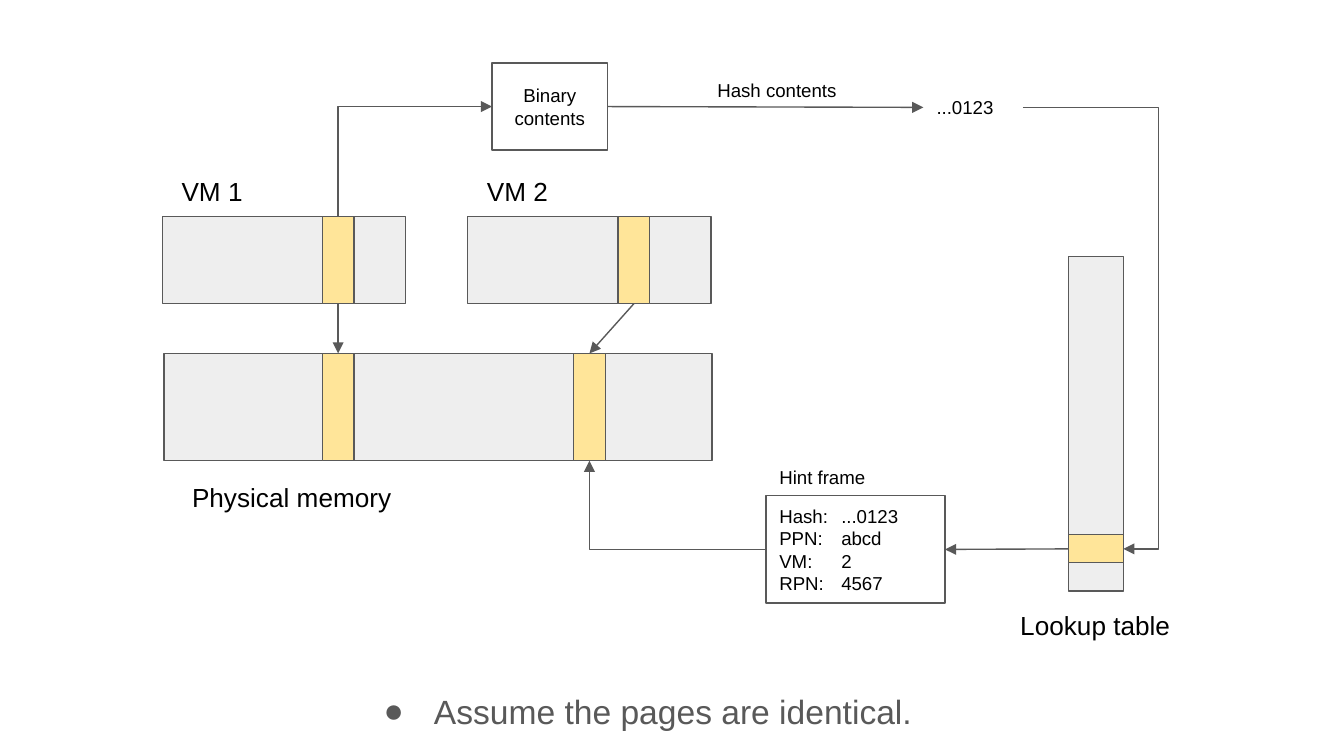
from lxml import etree
from pptx import Presentation
from pptx import util as u
from pptx.dml.color import RGBColor
from pptx.enum import shapes, text
from pptx.oxml.ns import qn

THEME = {
    "font": "Arial",
    "ink": "000000", "grey": "595959", "memory": "EEEEEE",
    "page": "FFE599", "paper": "FFFFFF",
    "small": 10, "label": 14, "bullet": 18, "line": 0.75,
}
INSET = 0.25
LEFT, CENTER = text.PP_ALIGN.LEFT, text.PP_ALIGN.CENTER

# Content: boxes are (left, top, width, height) in cm
BULLET = ("Assume the pages are identical.", (6.68, 12.7, 12.04, 1.3))

MEMORY = {
    "vm1": (3.07, 4.09, 4.6, 1.65),
    "vm2": (8.84, 4.09, 4.6, 1.65),
    "physical": (3.1, 6.68, 10.36, 2.03),
}
PAGE_WIDTH = 0.6
PAGES = {  # name: (memory it lies in, left)
    "vm1 page": ("vm1", 6.09),
    "vm2 page": ("vm2", 11.68),
    "physical page 1": ("physical", 6.09),
    "physical page 2": ("physical", 10.84),
}
LOOKUP = (20.19, 4.85, 1.04, 6.32)
ENTRY = (20.19, 10.11, 1.04, 0.53)

BINARY = ("Binary contents", (9.3, 1.19, 2.18, 1.65))
HINT = ((14.48, 9.37, 3.38, 2.03),
        [("Hash:", "...0123"), ("PPN:", "abcd"), ("VM:", "2"), ("RPN:", "4567")])
HINT_TAB = 1.17
HASH = ("...0123", (17.45, 1.6, 1.88, 0.86))

LABELS = [  # text, box, size, alignment
    ("VM 1", (3.07, 3.25, 1.88, 0.74), "label", CENTER),
    ("VM 2", (8.84, 3.25, 1.88, 0.74), "label", CENTER),
    ("Physical memory", (3.1, 8.97, 4.83, 0.86), "label", CENTER),
    ("Lookup table", (18.87, 11.38, 3.66, 0.86), "label", CENTER),
    ("Hint frame", (14.48, 8.69, 2.31, 0.64), "small", LEFT),
    ("Hash contents", (13.31, 1.47, 2.9, 0.46), "small", LEFT),
    (*HASH, "small", LEFT),
]


def color(name):
    return RGBColor.from_string(THEME[name])


def place(shape, box):
    shape.left, shape.top, shape.width, shape.height = map(u.Cm, box)


def edge(box, side):
    left, top, width, height = box
    return {
        "top": (left + width / 2, top),
        "bottom": (left + width / 2, top + height),
        "left": (left, top + height / 2),
        "right": (left + width, top + height / 2),
    }[side]


def write(shape, content, size, align, ink="ink", anchor=text.MSO_ANCHOR.MIDDLE):
    frame = shape.text_frame
    frame.text = content
    frame.word_wrap = True
    frame.auto_size = text.MSO_AUTO_SIZE.NONE
    frame.vertical_anchor = anchor
    frame.margin_left = frame.margin_right = u.Cm(INSET)
    frame.margin_top = frame.margin_bottom = u.Cm(INSET)
    for paragraph in frame.paragraphs:
        paragraph.alignment = align
        for run in paragraph.runs:
            run.font.name = THEME["font"]
            run.font.size = u.Pt(THEME[size])
            run.font.color.rgb = color(ink)


def add_box(slide, box, fill):
    shape = slide.shapes.add_shape(shapes.MSO_SHAPE.RECTANGLE, *map(u.Cm, box))
    shape.shadow.inherit = False
    shape.fill.solid()
    shape.fill.fore_color.rgb = color(fill)
    shape.line.color.rgb = color("grey")
    shape.line.width = u.Pt(THEME["line"])
    return shape


def add_arrow(slide, start, end, kind=shapes.MSO_CONNECTOR.STRAIGHT):
    arrow = slide.shapes.add_connector(kind, *map(u.Cm, start + end))
    arrow.line.color.rgb = color("grey")
    arrow.line.width = u.Pt(THEME["line"])
    etree.SubElement(arrow.line._get_or_add_ln(), qn("a:tailEnd"), type="triangle")
    etree.SubElement(arrow._element.spPr, qn("a:effectLst"))
    return arrow


def add_elbow(slide, start, end, rotation, preset, flip=False, adjust=()):
    arrow = add_arrow(slide, start, end, shapes.MSO_CONNECTOR.ELBOW)
    # The frame is stored unrotated, around the same centre
    width, height = abs(end[0] - start[0]), abs(end[1] - start[1])
    middle_x, middle_y = (start[0] + end[0]) / 2, (start[1] + end[1]) / 2
    if rotation % 180:
        width, height = height, width
    place(arrow, (middle_x - width / 2, middle_y - height / 2, width, height))
    transform = arrow._element.spPr.find(qn("a:xfrm"))
    transform.attrib.clear()
    transform.set("rot", str(rotation * 60000))
    if flip:
        transform.set("flipH", "1")
    geometry = arrow._element.spPr.find(qn("a:prstGeom"))
    geometry.set("prst", preset)
    guides = geometry.find(qn("a:avLst"))
    for number, value in enumerate(adjust, 1):
        etree.SubElement(guides, qn("a:gd"), name=f"adj{number}", fmla=f"val {value}")


def add_bullet(slide):
    content, box = BULLET
    body = slide.placeholders[1]
    place(body, box)
    write(body, content, "bullet", LEFT, "grey", text.MSO_ANCHOR.TOP)
    paragraph = body.text_frame.paragraphs[0]
    paragraph.line_spacing = 1.15
    paragraph.space_before = u.Pt(0)
    properties = paragraph._p.get_or_add_pPr()
    properties.set("marL", str(u.Cm(1.27)))
    properties.set("indent", str(-u.Cm(0.95)))
    bullet_color = etree.SubElement(properties, qn("a:buClr"))
    etree.SubElement(bullet_color, qn("a:srgbClr"), val=THEME["grey"])
    etree.SubElement(properties, qn("a:buFont"), typeface=THEME["font"])
    etree.SubElement(properties, qn("a:buChar"), char="●")


def add_hint_frame(slide):
    box, rows = HINT
    shape = add_box(slide, box, "paper")
    write(shape, "\n".join("\t".join(row) for row in rows), "small", LEFT)
    for paragraph in shape.text_frame.paragraphs:
        tabs = etree.SubElement(paragraph._p.get_or_add_pPr(), qn("a:tabLst"))
        etree.SubElement(tabs, qn("a:tab"), pos=str(u.Cm(HINT_TAB)), algn="l")


def main():
    presentation = Presentation()
    presentation.slide_width, presentation.slide_height = u.Cm(25.4), u.Cm(14.29)
    slide = presentation.slides.add_slide(presentation.slide_layouts[1])
    title = slide.shapes.title._element
    title.getparent().remove(title)
    add_bullet(slide)

    # Memories with their pages, and the lookup table with its entry
    for box in MEMORY.values():
        add_box(slide, box, "memory")
    pages = {}
    for name, (memory, left) in PAGES.items():
        _, top, _, height = MEMORY[memory]
        pages[name] = (left, top, PAGE_WIDTH, height)
        add_box(slide, pages[name], "page")
    add_box(slide, LOOKUP, "memory")
    add_box(slide, ENTRY, "page")

    # Text boxes and labels
    content, binary = BINARY
    write(add_box(slide, binary, "paper"), content, "small", CENTER)
    add_hint_frame(slide)
    for content, box, size, align in LABELS:
        write(slide.shapes.add_textbox(*map(u.Cm, box)), content, size, align)

    # Arrows
    hint, hash_box = HINT[0], HASH[1]
    vm1_page, target = pages["vm1 page"], pages["physical page 2"]
    for start, end in [
        (edge(vm1_page, "bottom"), edge(pages["physical page 1"], "top")),
        (edge(pages["vm2 page"], "bottom"), edge(target, "top")),
        (edge(ENTRY, "left"), edge(hint, "right")),
        (edge(binary, "right"), edge(hash_box, "left")),
    ]:
        add_arrow(slide, start, end)
    add_elbow(slide, edge(hint, "left"), edge(target, "bottom"), 180, "bentConnector2")
    add_elbow(slide, edge(vm1_page, "top"), edge(binary, "left"), 270, "bentConnector2")
    add_elbow(slide, edge(hash_box, "right"), edge(ENTRY, "right"), 270,
              "bentConnector4", flip=True, adjust=(0, 134800))

    presentation.save("out.pptx")


if __name__ == "__main__":
    main()
